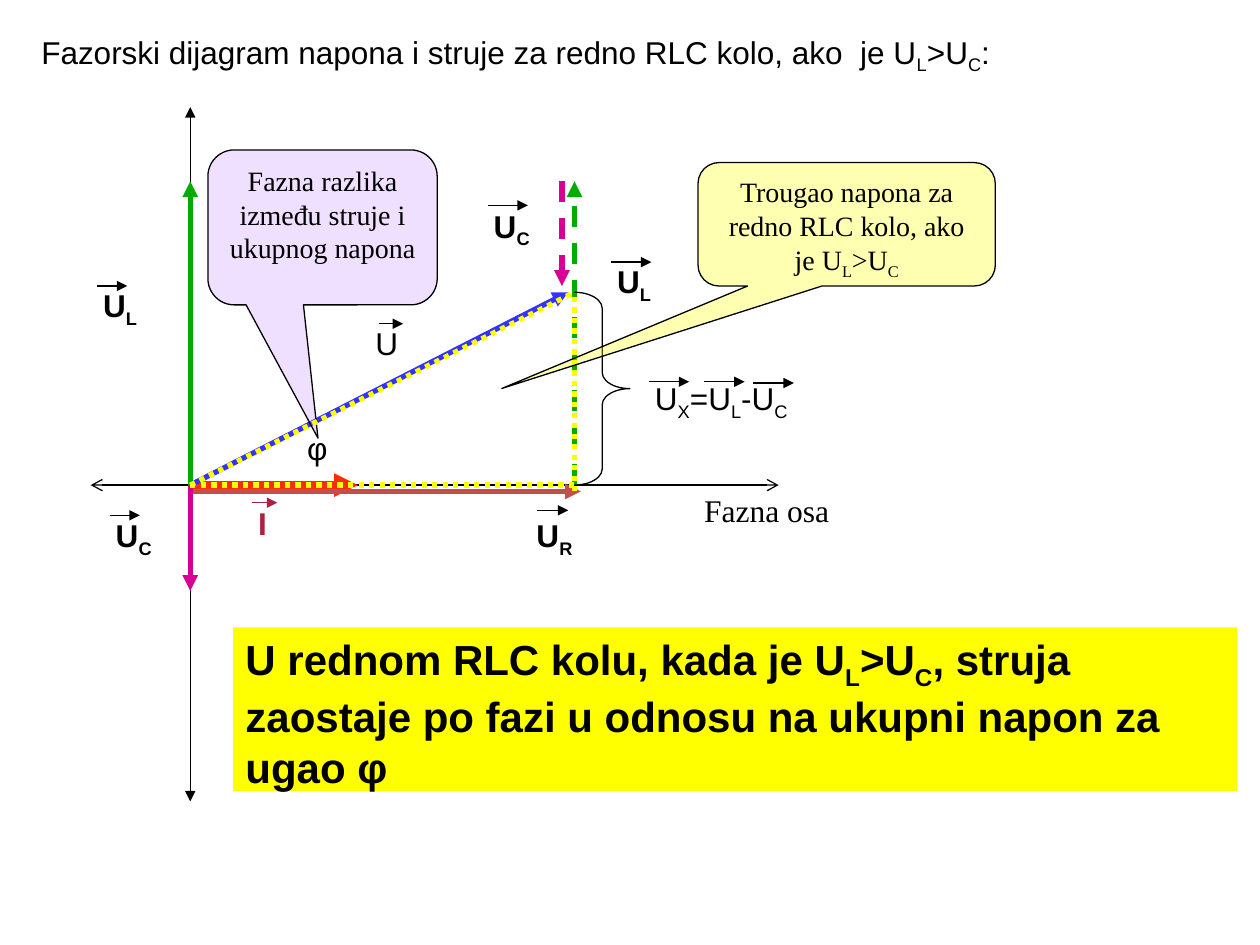
from lxml import etree
from pptx import Presentation
from pptx import util as u
from pptx.dml.color import RGBColor
from pptx.enum import dml, shapes, text
from pptx.oxml.ns import qn

BLACK = RGBColor(0, 0, 0)
CRIMSON = RGBColor(0xAA, 0x22, 0x3F)
RED = RGBColor(0xFA, 0x2D, 0x04)
BRICK = RGBColor(0xC0, 0x50, 0x4D)
GREEN = RGBColor(0x00, 0xAC, 0x00)
MAGENTA = RGBColor(0xD6, 0x00, 0x93)
BLUE = RGBColor(0x33, 0x33, 0xFF)
YELLOW = RGBColor(0xFF, 0xFF, 0x00)
LILAC = RGBColor(0xCC, 0x99, 0xFF)
DASH, DOT = dml.MSO_LINE.DASH, dml.MSO_LINE.ROUND_DOT
SERIF = "Times New Roman"

# Key points of the phasor diagram, in inches
ORIGIN_X, ORIGIN_Y = 1.51, 3.85
RIGHT_X, TOP_Y, TIP_Y = 4.56, 1.44, 2.32
RESISTOR_Y = 3.9
ORIGIN = (ORIGIN_X, ORIGIN_Y)
CORNER = (RIGHT_X, ORIGIN_Y)
APEX = (RIGHT_X, TIP_Y)
LABEL_HEIGHT = 0.4

# Content; "_" puts the next letter in subscript
TITLE = "Fazorski dijagram napona i struje za redno RLC kolo, ako  je U_L>U_C:"
CONCLUSION = ("U rednom RLC kolu, kada je U_L>U_C, struja zaostaje po fazi "
              "u odnosu na ukupni napon za ugao φ")

AXES = [  # start, end, arrowhead
    ((ORIGIN_X, 0.85), (ORIGIN_X, 6.36), "triangle"),
    ((0.72, ORIGIN_Y), (6.18, ORIGIN_Y), "arrow"),
]
PHASORS = [  # start, end, colour, width, dash
    (ORIGIN, (2.84, ORIGIN_Y), RED, 4.5, None),
    ((ORIGIN_X, RESISTOR_Y), (4.61, RESISTOR_Y), BRICK, 3, None),
    (ORIGIN, (ORIGIN_X, TOP_Y), GREEN, 3, None),
    (ORIGIN, (ORIGIN_X, 4.69), MAGENTA, 3, None),
    (CORNER, (RIGHT_X, TOP_Y), GREEN, 3, DASH),
    ((4.46, TOP_Y), (4.46, 2.27), MAGENTA, 3, DASH),
    (ORIGIN, (4.51, TIP_Y), BLUE, 3, None),
]
TRIANGLE = [(ORIGIN, CORNER), ((RIGHT_X, RESISTOR_Y), APEX), (ORIGIN, APEX)]

LABELS = [  # text, left, top, width, bold, colour, (left, top, length) of arrows
    ("I", 1.95, 3.95, 0.27, True, CRIMSON, [(0.05, 0.04, 0.2)]),
    ("U_R", 4.16, 4.05, 0.5, True, BLACK, [(0.1, 0, 0.25)]),
    ("U_L", 0.72, 2.22, 0.62, True, BLACK, [(0.05, 0.05, 0.24)]),
    ("U_C", 0.82, 4.05, 0.62, True, BLACK, [(0.05, 0.04, 0.24)]),
    ("U_L", 4.8, 2.03, 0.62, True, BLACK, [(0.05, 0.05, 0.32)]),
    ("U_C", 3.82, 1.59, 0.62, True, BLACK, [(0.05, 0.04, 0.32)]),
    ("U", 2.88, 2.52, 0.38, False, BLACK, [(0.13, 0.05, 0.19)]),
    ("U_X=U_L-U_C", 5.1, 2.96, 1.3, False, BLACK,
     [(0.05, 0.07, 0.32), (0.49, 0.07, 0.32), (0.88, 0.08, 0.32)]),
    ("φ", 2.34, 3.36, 0.36, False, BLACK, []),
]
PHASE_CALLOUT = ("Fazna razlika između struje i ukupnog napona",
                 (1.65, 1.19, 1.82, 1.23), LILAC, (-0.02, 1.36, 0.17))
TRIANGLE_CALLOUT = ("Trougao napona za redno RLC kolo, ako je U_L>U_C",
                    (5.54, 1.29, 2.36, 0.98), YELLOW, (-1.16, 1.33, 0.17))

presentation = Presentation()
presentation.slide_width, presentation.slide_height = u.Inches(10), u.Inches(7.5)
slide = presentation.slides.add_slide(presentation.slide_layouts[6])


def write(shape, content, size=18, font="Arial", color=BLACK, bold=False,
          align=text.PP_ALIGN.LEFT, wrap=True):
    """Fill a shape with one paragraph, lowering each letter after "_"."""
    frame = shape.text_frame
    frame.word_wrap = wrap
    frame.vertical_anchor = text.MSO_ANCHOR.TOP
    paragraph = frame.paragraphs[0]
    paragraph.alignment = align
    first, *rest = content.split("_")
    pieces = [(first, False)]
    for part in rest:
        pieces += [(part[0], True), (part[1:], False)]
    for piece, lowered in pieces:
        if not piece:
            continue
        run = paragraph.add_run()
        run.text = piece
        run.font.size, run.font.name = u.Pt(size), font
        run.font.bold, run.font.color.rgb = bold, color
        if lowered:
            run.font._element.set("baseline", "-25000")


def add_text(content, left, top, width, height=LABEL_HEIGHT, **style):
    box = slide.shapes.add_textbox(*map(u.Inches, (left, top, width, height)))
    write(box, content, **style)
    return box


def add_line(start, end, color=BLACK, width=0.75, dash=None, head=None, tail=None):
    line = slide.shapes.add_connector(
        shapes.MSO_CONNECTOR.STRAIGHT, *map(u.Inches, (*start, *end)))
    line.line.color.rgb, line.line.width = color, u.Pt(width)
    if dash:
        line.line.dash_style = dash
    outline = line.line._get_or_add_ln()
    for tag, kind in (("a:headEnd", head), ("a:tailEnd", tail)):
        if kind:
            etree.SubElement(outline, qn(tag)).set("type", kind)
    etree.SubElement(line._element.spPr, qn("a:effectLst"))


def add_outlined(kind, box, adjustments):
    shape = slide.shapes.add_shape(kind, *map(u.Inches, box))
    shape.shadow.inherit = False
    shape.line.color.rgb, shape.line.width = BLACK, u.Pt(0.75)
    for index, value in enumerate(adjustments):
        shape.adjustments[index] = value
    return shape


def add_callout(content, box, color, adjustments):
    callout = add_outlined(shapes.MSO_SHAPE.ROUNDED_RECTANGULAR_CALLOUT,
                           box, adjustments)
    callout.fill.solid()
    callout.fill.fore_color.rgb = color
    fill_color = callout._element.spPr.find(qn("a:solidFill"))[0]
    etree.SubElement(fill_color, qn("a:alpha")).set("val", "30000")
    write(callout, content, size=16, font=SERIF, align=text.PP_ALIGN.CENTER)


# Title and axes
add_text(TITLE, 0.23, 0.21, 9.2)
for start, end, arrowhead in AXES:
    add_line(start, end, head=arrowhead, tail=arrowhead)
add_text("Fazna osa", 5.49, ORIGIN_Y, 1.19, font=SERIF, wrap=False)

# Phasors
for start, end, color, width, dash in PHASORS:
    add_line(start, end, color, width, dash, tail="triangle")

# Brace over the voltage difference
add_outlined(shapes.MSO_SHAPE.RIGHT_BRACE,
             (RIGHT_X, TIP_Y, 0.44, ORIGIN_Y - TIP_Y), (0.29, 0.5)).fill.background()

# Labels with vector arrows above them
for content, left, top, width, bold, color, arrows in LABELS:
    add_text(content, left, top, width, bold=bold, color=color,
             wrap=len(content) > 1)
    for dx, dy, length in arrows:
        add_line((left + dx, top + dy), (left + dx + length, top + dy),
                 color, tail="triangle")

# Callouts and the dotted voltage triangle
add_callout(*PHASE_CALLOUT)
for start, end in TRIANGLE:
    add_line(start, end, YELLOW, 3, DOT)
add_callout(*TRIANGLE_CALLOUT)

# Conclusion
conclusion = add_text(CONCLUSION, 1.85, 4.98, 7.97, 1.3, size=24, bold=True)
conclusion.fill.solid()
conclusion.fill.fore_color.rgb = YELLOW

presentation.save("out.pptx")
